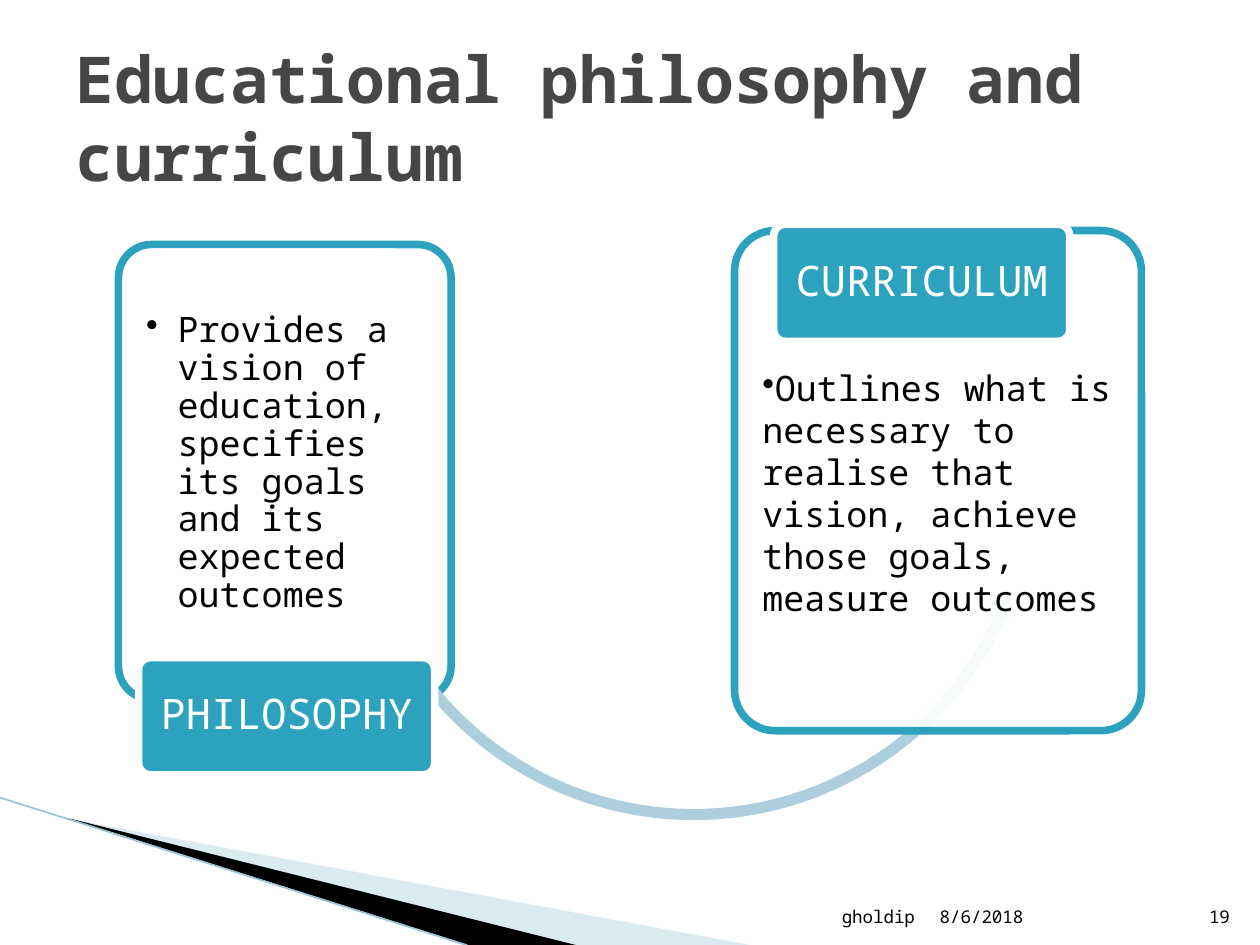
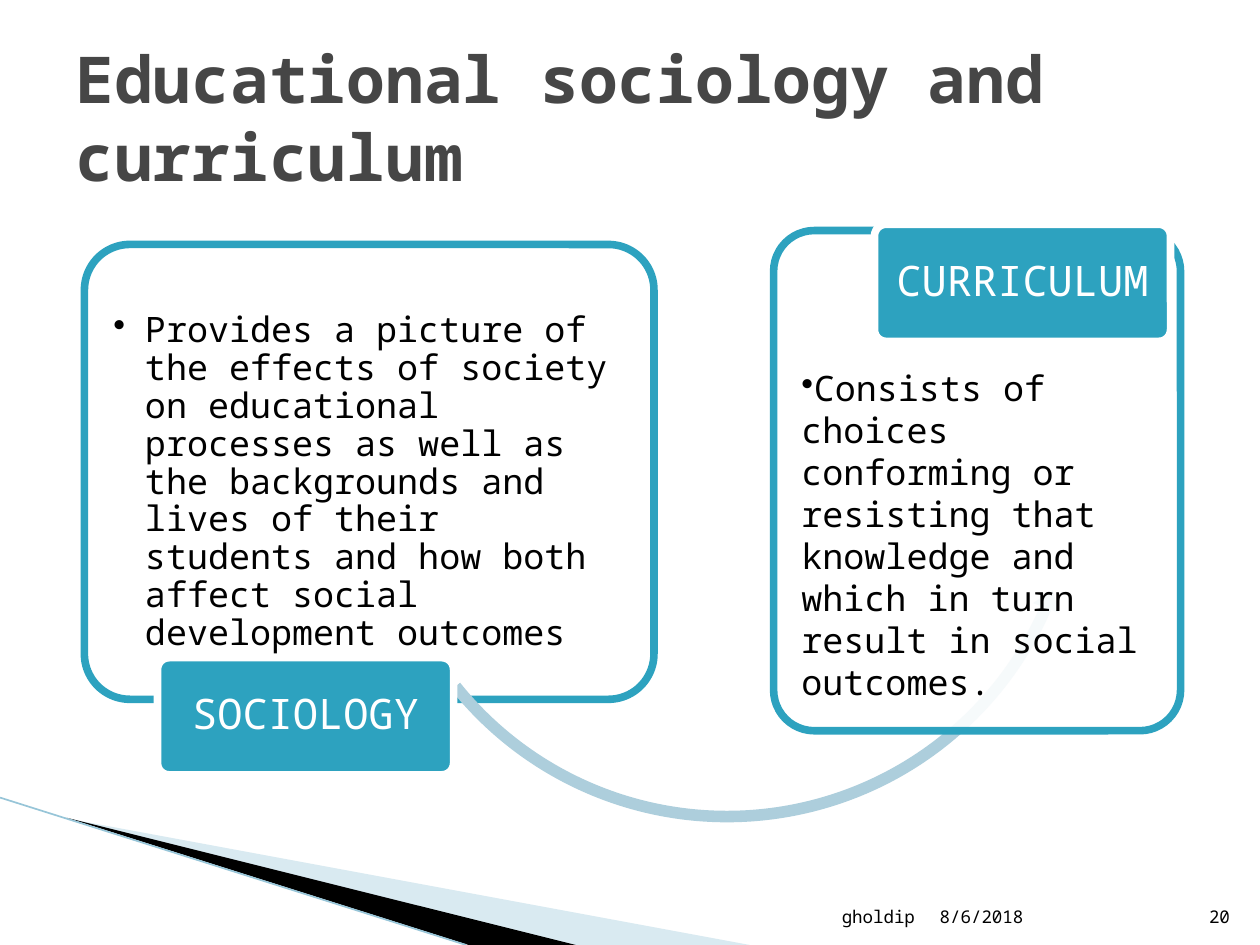
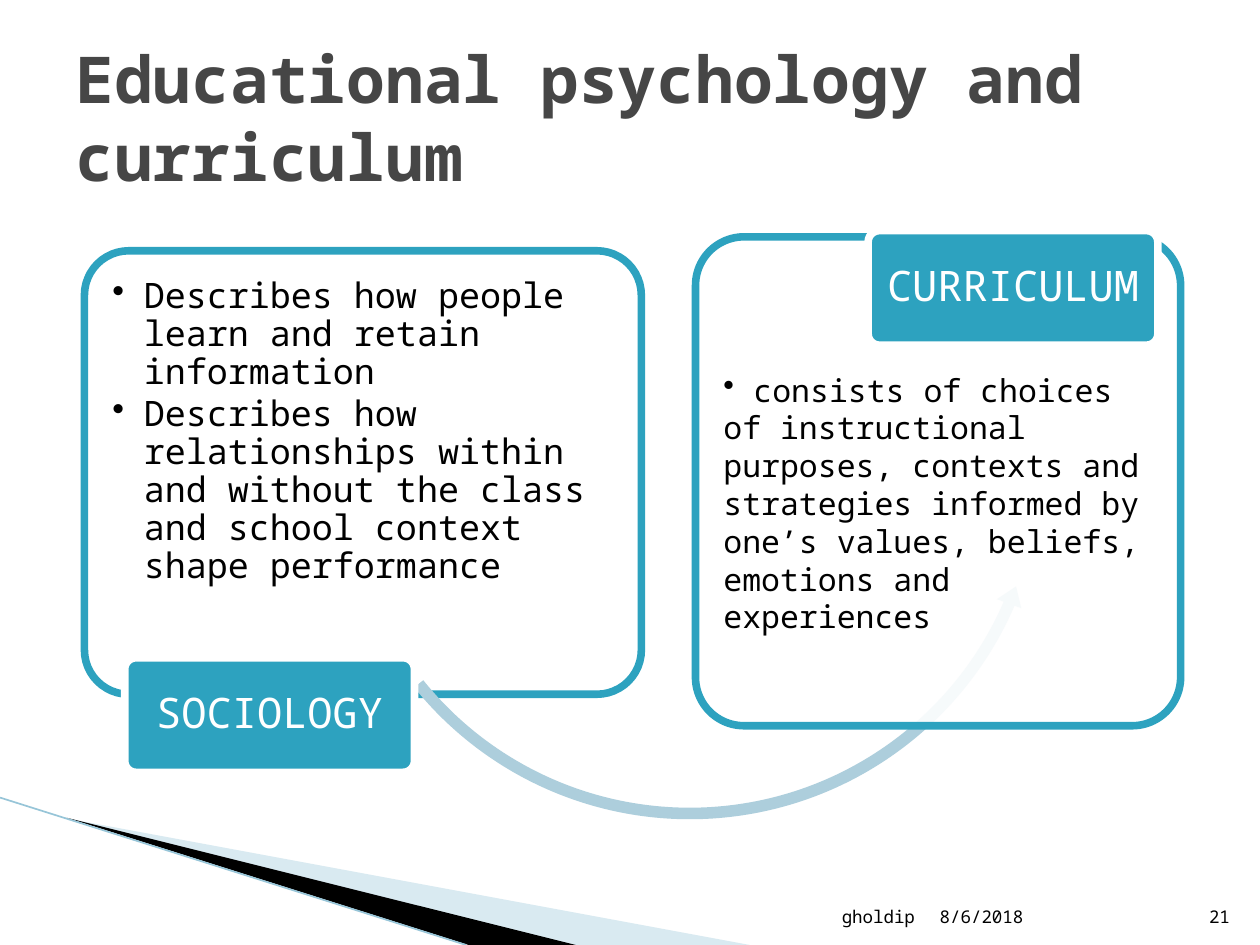
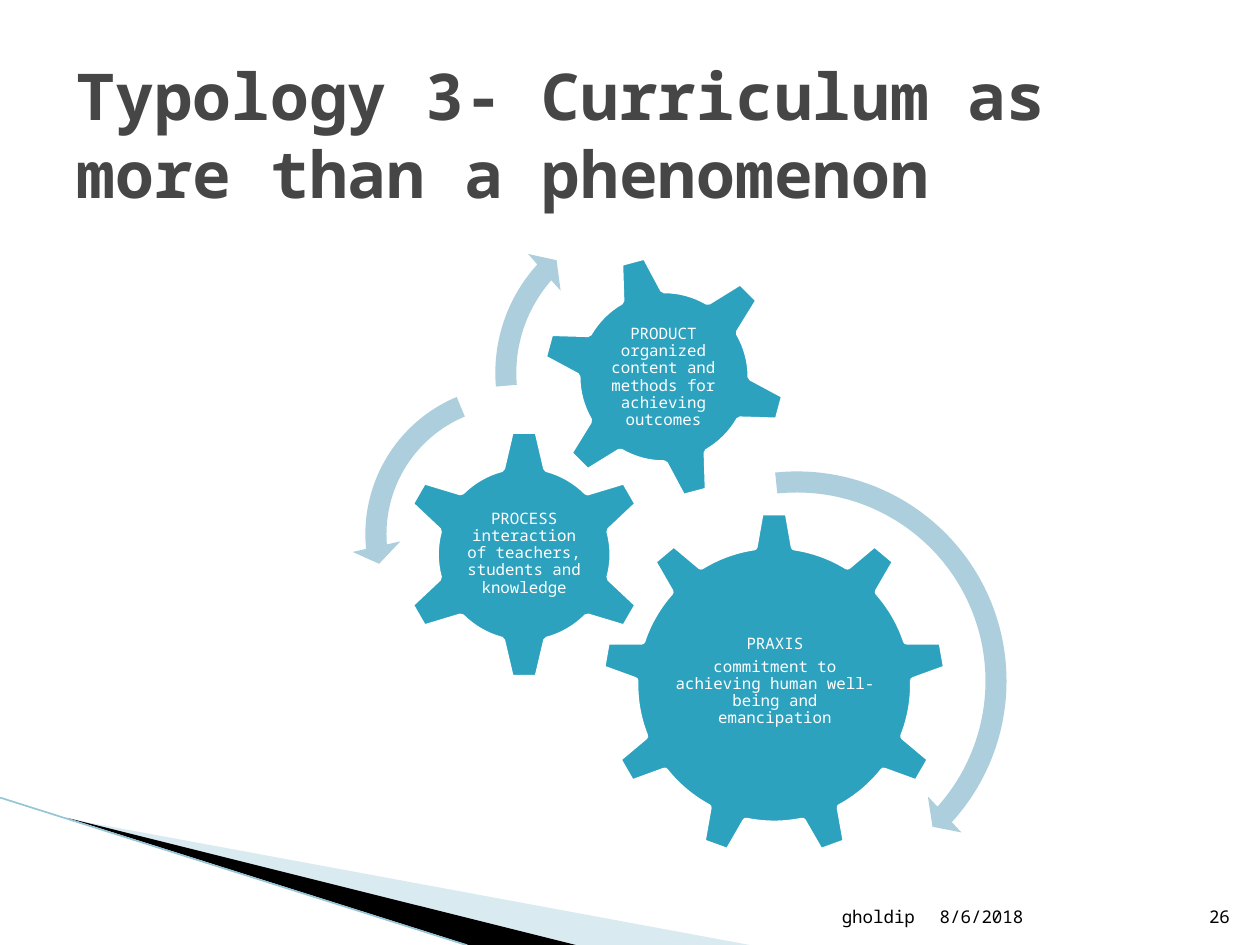
from dataclasses import dataclass

from lxml import etree
from pptx import Presentation
from pptx import util as u
from pptx.dml.color import RGBColor
from pptx.enum import shapes, text
from pptx.oxml import ns

FONT = "Noto Sans Mono"
HUES = {
    "teal": "2DA2BF",
    "mist": "ADCEDC",
    "wedge": "A0CBDC",
    "edge": "97C5D8",
    "head": "464646",
    "black": "000000",
    "white": "FFFFFF",
}
KINDS = shapes.MSO_SHAPE
LEFT, MID, RIGHT = text.PP_ALIGN.LEFT, text.PP_ALIGN.CENTER, text.PP_ALIGN.RIGHT
TOP, CENTER, LOW = (text.MSO_ANCHOR.TOP, text.MSO_ANCHOR.MIDDLE,
                    text.MSO_ANCHOR.BOTTOM)
BORDER = 4.33
ROUND = 0.1
Box = tuple[float, float, float, float]


@dataclass
class Panel:
    box: Box
    lines: list[str]
    top: float
    size: float = 20
    hang: float = 0
    space: float = 1
    pad: float = 0.22


@dataclass
class Label:
    box: Box
    words: str


@dataclass
class Arrow:
    kind: shapes.MSO_SHAPE
    box: Box
    bends: tuple[float, ...]


@dataclass
class Gear:
    kind: shapes.MSO_SHAPE
    box: Box
    area: Box
    lines: list[str]
    turn: float = 0


@dataclass
class Flow:
    """A slide with two framed panels joined by a curved arrow."""
    title: str
    page: int
    source: Panel
    arrow: Arrow
    tag: Label
    target: Panel
    badge: Label


def paint(shape, hue: str, alpha: int = 100, line: str | None = None) -> None:
    shape.shadow.inherit = False
    shape.fill.solid()
    shape.fill.fore_color.rgb = RGBColor.from_string(HUES[hue])
    if alpha < 100:
        color = shape._element.spPr.find(".//" + ns.qn("a:srgbClr"))
        etree.SubElement(color, ns.qn("a:alpha"), val=str(alpha * 1000))
    if line:
        shape.line.color.rgb = RGBColor.from_string(HUES[line])
        shape.line.width = u.Pt(BORDER)
    else:
        shape.line.fill.background()


def put(slide, kind, box: Box, bends: tuple[float, ...] = ()):
    shape = slide.shapes.add_shape(kind, *map(u.Inches, box))
    for place, bend in enumerate(bends):
        shape.adjustments[place] = bend
    return shape


def write(shape, lines: list[str], *, size: float, hue: str = "black",
          bold: bool = False, align=LEFT, anchor=TOP, space: float = 1,
          after: float = 0, inset: Box = (0.1, 0.05, 0.1, 0.05),
          bullet: bool = False, hang: float = 0) -> None:
    frame = shape.text_frame
    frame.word_wrap = True
    frame.vertical_anchor = anchor
    (frame.margin_left, frame.margin_top,
     frame.margin_right, frame.margin_bottom) = map(u.Inches, inset)
    for place, line in enumerate(lines):
        para = frame.add_paragraph() if place else frame.paragraphs[0]
        if bullet:
            props = para._p.get_or_add_pPr()
            props.set("marL", str(u.Inches(hang)))
            props.set("indent", str(-u.Inches(hang)))
            etree.SubElement(props, ns.qn("a:buChar"), char="•")
        para.alignment = align
        para.line_spacing = space
        if place < len(lines) - 1:
            para.space_after = u.Pt(after)
        run = para.add_run()
        run.text = line
        run.font.name = FONT
        run.font.size = u.Pt(size)
        run.font.bold = bold
        run.font.color.rgb = RGBColor.from_string(HUES[hue])


def note(slide, box: Box, lines: list[str], **style) -> None:
    write(slide.shapes.add_textbox(*map(u.Inches, box)), lines, **style)


def wedge(slide, points: list[tuple[float, float]], hue: str,
          alpha: int = 100) -> None:
    spots = [(u.Inches(x), u.Inches(y)) for x, y in points]
    pen = slide.shapes.build_freeform(*spots[0])
    pen.add_line_segments(spots[1:], close=True)
    paint(pen.convert_to_shape(), hue, alpha)


def start(deck, title: str, page: int, box: Box = (0.5, 0.3, 9, 1.25)):
    """Add a slide with the corner wedges, footer and title."""
    slide = deck.slides.add_slide(deck.slide_layouts[6])
    wedge(slide, [(0.55, 6.5), (5.95, 7.5), (4.56, 7.5)], "wedge", 40)
    wedge(slide, [(0.53, 6.49), (4.57, 7.5), (3.72, 7.5)], "black")
    line = slide.shapes.add_connector(
        shapes.MSO_CONNECTOR.STRAIGHT,
        *map(u.Inches, (0, 6.33, 3.7, 7.5)))
    line.line.color.rgb = RGBColor.from_string(HUES["edge"])
    line.line.width = u.Pt(0.95)
    etree.SubElement(line._element.spPr, ns.qn("a:effectLst"))
    for left, width, words, align in (
            (7.36, 2.1, "8/6/2018", LEFT),
            (4.79, 2.57, "gholdip", RIGHT),
            (9.46, 0.4, str(page), RIGHT)):
        note(slide, (left, 7.01, width, 0.4), [words], size=10,
             align=align, anchor=LOW)
    note(slide, box, [title], size=36.9, hue="head", bold=True, anchor=CENTER)
    return slide


def frame(slide, panel: Panel) -> None:
    shape = put(slide, KINDS.ROUNDED_RECTANGLE, panel.box, (ROUND,))
    paint(shape, "white", 90, "teal")
    # The rounded corner already pushes the text in by 29% of its radius.
    corner = 0.29 * ROUND * min(panel.box[2:])
    side = panel.pad - corner
    write(shape, panel.lines, size=panel.size, space=panel.space, after=2.6,
          inset=(side, panel.top - corner, side, 0.14),
          bullet=True, hang=panel.hang)


def stamp(slide, label: Label) -> None:
    shape = put(slide, KINDS.ROUNDED_RECTANGLE, label.box, (ROUND,))
    paint(shape, "teal", line="white")
    write(shape, [label.words], size=24, hue="white", align=MID,
          anchor=CENTER, space=0.9, inset=(0.05, 0.03, 0.05, 0.03))


def bend(slide, arrow: Arrow) -> None:
    paint(put(slide, arrow.kind, arrow.box, arrow.bends), "mist")


def cog(slide, gear: Gear) -> None:
    shape = put(slide, gear.kind, gear.box)
    shape.rotation = gear.turn
    paint(shape, "teal", line="white")
    note(slide, gear.area, gear.lines, size=9, hue="white", align=MID,
         anchor=CENTER, space=0.9, after=3.2, inset=(0.01,) * 4)


FLOWS = [
    Flow(
        "Educational philosophy and curriculum", 19,
        Panel((0.94, 1.94, 2.64, 3.61),
              ["Provides a vision of education, specifies its goals and its "
               "expected outcomes"], 0.54, hang=0.25, space=0.9),
        Arrow(KINDS.LEFT_CIRCULAR_ARROW, (2.73, 1.02, 5.55, 5.55),
              (0.016, 1.956, 14.027, 84.561, 0.019)),
        Label((1.1, 5.22, 2.35, 0.93), "PHILOSOPHY"),
        Panel((5.83, 1.83, 3.23, 3.97),
              ["Outlines what is necessary to realise that vision, achieve "
               "those goals, measure outcomes"], 1.08),
        Label((6.14, 1.78, 2.35, 0.93), "CURRICULUM")),
    Flow(
        "Educational sociology and curriculum", 20,
        Panel((0.67, 1.94, 4.52, 3.61),
              ["Provides a picture of the effects of society on educational "
               "processes as well as the backgrounds and lives of their "
               "students and how both affect social development outcomes"],
              0.54, hang=0.25, space=0.9, pad=0.23),
        Arrow(KINDS.LEFT_CIRCULAR_ARROW, (2.9, 0.85, 5.74, 5.74),
              (0.016, 1.889, 14.155, 84.756, 0.019)),
        Label((1.25, 5.22, 2.35, 0.93), "SOCIOLOGY"),
        Panel((6.14, 1.83, 3.23, 3.97),
              ["Consists of choices conforming or resisting that knowledge "
               "and which in turn result in social outcomes."], 1.08),
        Label((6.94, 1.78, 2.35, 0.93), "CURRICULUM")),
    Flow(
        "Educational psychology and curriculum", 21,
        Panel((0.67, 1.99, 4.42, 3.52),
              ["Describes how people learn and retain information",
               "Describes how relationships within and without the class and "
               "school context shape performance"],
              0.22, hang=0.25, space=0.9),
        Arrow(KINDS.LEFT_CIRCULAR_ARROW, (2.61, 0.83, 5.73, 5.73),
              (0.016, 1.848, 14.043, 84.685, 0.018)),
        Label((0.99, 5.22, 2.3, 0.91), "SOCIOLOGY"),
        Panel((5.52, 1.88, 3.85, 3.88),
              [" consists of choices of instructional purposes, contexts and "
               "strategies informed by one’s values, beliefs, emotions and "
               "experiences"], 1.06, size=18),
        Label((6.89, 1.83, 2.3, 0.91), "CURRICULUM")),
]

GEARS = [
    Gear(KINDS.GEAR_9, (4.76, 4.05, 2.77, 2.77), (5.32, 4.7, 1.66, 1.42),
         ["PRAXIS",
          "commitment to achieving human well-being and emancipation"]),
    Gear(KINDS.GEAR_6, (3.15, 3.39, 2.02, 2.02), (3.66, 3.9, 1, 0.99),
         ["PROCESS interaction of teachers, students and knowledge"]),
    Gear(KINDS.GEAR_6, (4.28, 2, 1.98, 1.98), (4.71, 2.44, 1.11, 1.11),
         ["PRODUCT organized content and methods for achieving outcomes"],
         turn=345),
]

TURNS = [
    Arrow(KINDS.CIRCULAR_ARROW, (4.55, 3.63, 3.55, 3.55),
          (0.047, 2.99, 25.253, 158.418, 0.055)),
    Arrow(KINDS.LEFT_CIRCULAR_ARROW, (2.79, 2.95, 2.58, 2.58),
          (0.065, 4.3, 104.891, 148.378, 0.075)),
    Arrow(KINDS.CIRCULAR_ARROW, (3.82, 1.57, 2.78, 2.78),
          (0.06, 3.941, 133.138, 105.082, 0.07)),
]


def main() -> None:
    deck = Presentation()
    deck.slide_width, deck.slide_height = u.Inches(10), u.Inches(7.5)
    for flow in FLOWS:
        slide = start(deck, flow.title, flow.page)
        frame(slide, flow.source)
        bend(slide, flow.arrow)
        stamp(slide, flow.tag)
        frame(slide, flow.target)
        stamp(slide, flow.badge)
    slide = start(deck, "Typology 3- Curriculum as more than a phenomenon", 26,
                  (0.51, 0.36, 9, 1.4))
    for gear in GEARS:
        cog(slide, gear)
    for turn in TURNS:
        bend(slide, turn)
    deck.save("out.pptx")


if __name__ == "__main__":
    main()
